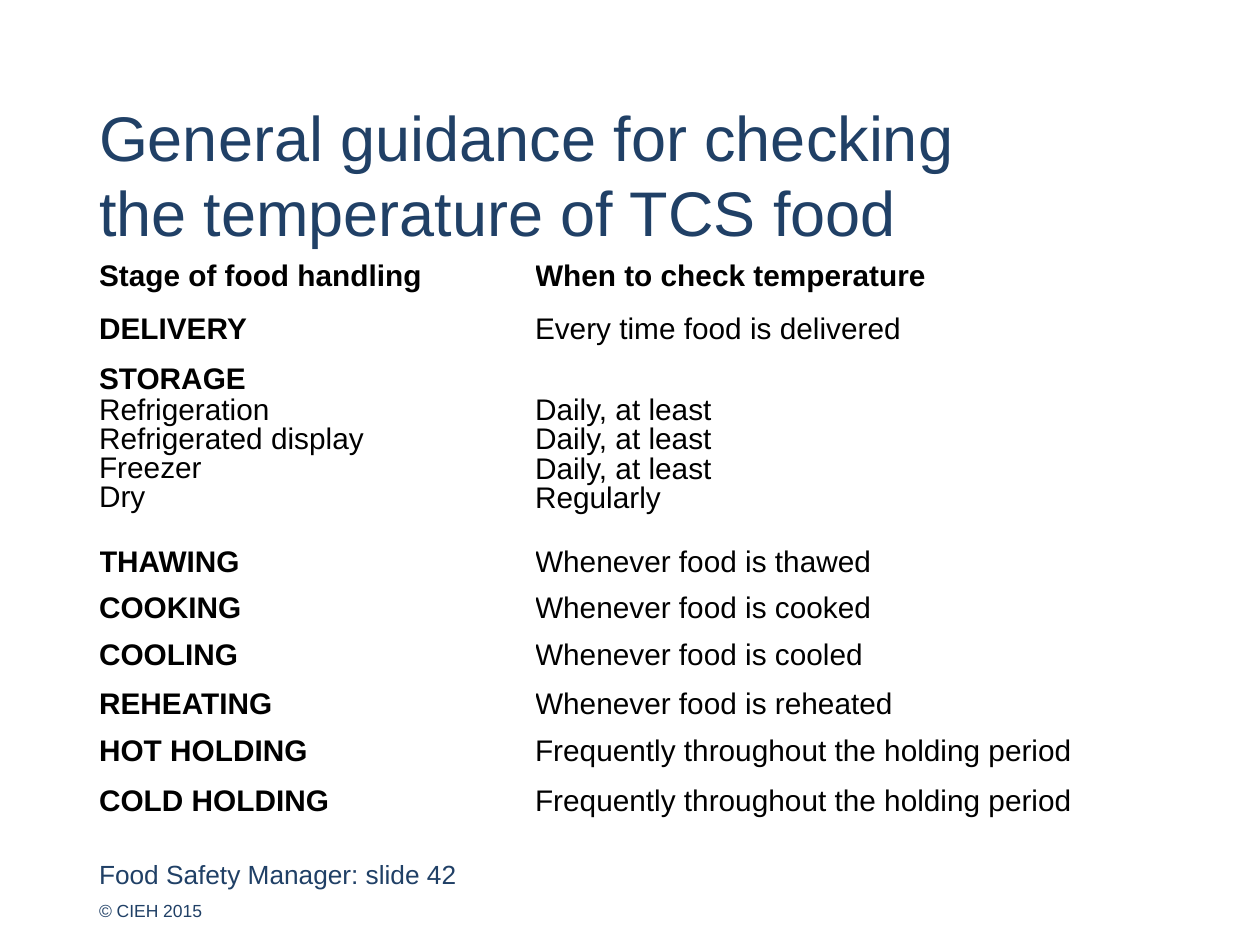
from lxml.etree import SubElement
from pptx import Presentation
from pptx.dml.color import RGBColor
from pptx.enum.text import MSO_ANCHOR as Anchor
from pptx.oxml.ns import qn
from pptx.util import Pt

SCALE = 914400 / 126  # EMU per px
FONT = "Arial"
COLORS = {"navy": "204066", "black": "000000", "white": "FFFFFF"}


def px(length):
    return int(length * SCALE)


def style(paragraph, size, color, bold=False):
    for run in paragraph.runs:
        run.font.name = FONT
        run.font.size = Pt(size)
        run.font.bold = bold
        run.font.color.rgb = RGBColor.from_string(COLORS[color])


presentation = Presentation()
presentation.slide_width, presentation.slide_height = px(1260), px(945)
slide = presentation.slides.add_slide(presentation.slide_layouts[6])

# Title and footer: text, left, top, width, height, size, line spacing
TITLE = "General guidance for checking\vthe temperature of TCS food"
TEXTS = [
    (TITLE, 99, 99, 1077, 164, 36, Pt(43)),
    ("Food Safety Manager: slide 42", 99, 858, 412, 32, 15, 1.0),
    ("© CIEH 2015", 99, 900, 134, 30, 10, 1.0),
]
for text, left, top, width, height, size, spacing in TEXTS:
    shape = slide.shapes.add_textbox(px(left), px(top), px(width), px(height))
    frame = shape.text_frame
    frame.word_wrap = True
    frame.margin_left = frame.margin_right = 0
    frame.margin_top = frame.margin_bottom = 0
    paragraph = frame.paragraphs[0]
    paragraph.text = text
    paragraph.line_spacing = spacing
    style(paragraph, size, "navy")

# Guidance table: row height, stage, when to check
STORAGE = "STORAGE\nRefrigeration\nRefrigerated display\nFreezer\nDry"
CHECKS = "Daily, at least\nDaily, at least\nDaily, at least\nRegularly"
HOLDING = "Frequently throughout the holding period"
ROWS = [
    (53, "Stage of food handling", "When to check temperature"),
    (47, "DELIVERY", "Every time food is delivered"),
    (186, STORAGE, CHECKS),
    (47, "THAWING", "Whenever food is thawed"),
    (47, "COOKING", "Whenever food is cooked"),
    (49, "COOLING", "Whenever food is cooled"),
    (47, "REHEATING", "Whenever food is reheated"),
    (50, "HOT HOLDING", HOLDING),
    (69, "COLD HOLDING", HOLDING),
]
COLUMN_WIDTHS = (436, 572)
FIRST_LINE = 40  # height of the STORAGE heading

table = slide.shapes.add_table(
    len(ROWS), 2, px(99), px(262), px(sum(COLUMN_WIDTHS)),
    px(sum(row[0] for row in ROWS))).table
table.first_row = table.horz_banding = False
for column, width in zip(table.columns, COLUMN_WIDTHS):
    column.width = px(width)

for row_index, (height, *texts) in enumerate(ROWS):
    table.rows[row_index].height = px(height)
    for column_index, text in enumerate(texts):
        cell = table.cell(row_index, column_index)
        cell.margin_left = cell.margin_right = cell.margin_bottom = 0
        cell.margin_top = px(FIRST_LINE) if text == CHECKS else 0
        cell.vertical_anchor = Anchor.TOP

        # Thin white borders, no fill
        properties = cell._tc.get_or_add_tcPr()
        for side in ("a:lnL", "a:lnR", "a:lnT", "a:lnB"):
            line = SubElement(properties, qn(side), w=str(Pt(0.5)))
            fill = SubElement(line, qn("a:solidFill"))
            SubElement(fill, qn("a:srgbClr"), val=COLORS["white"])
        cell.fill.background()

        # Headings bold, stacked storage lines set tight
        cell.text_frame.text = text
        for index, paragraph in enumerate(cell.text_frame.paragraphs):
            heading = index == 0 and (row_index == 0 or column_index == 0)
            if text in (STORAGE, CHECKS):
                paragraph.line_spacing = 1.0 if heading else 0.7
            else:
                paragraph.line_spacing = 0.9
            if index > 0:
                paragraph.space_before = Pt(3.4)
            style(paragraph, 17, "black", heading)

presentation.save("out.pptx")
